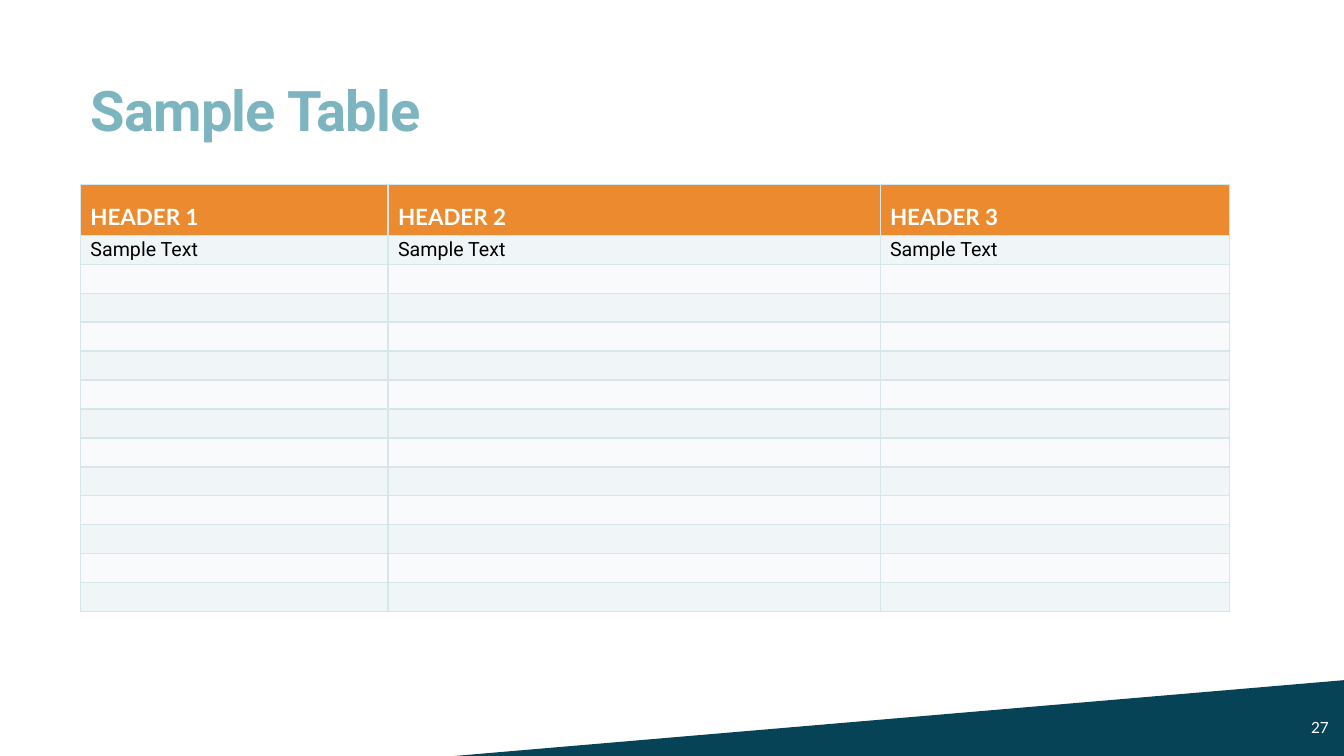
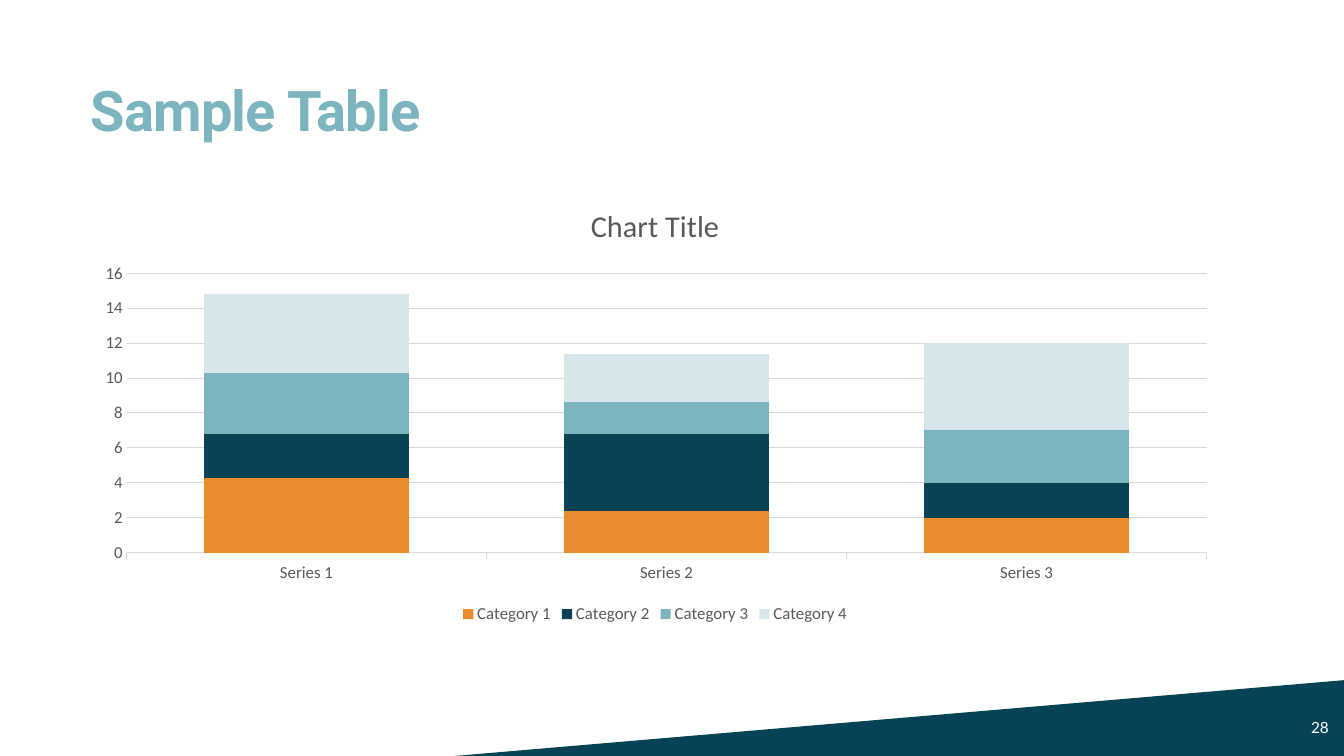
"""Build two sample slides: a banded table and a stacked column chart."""
from lxml import etree
from pptx import Presentation
from pptx.chart.data import CategoryChartData
from pptx.dml.color import RGBColor
from pptx.enum.chart import XL_CHART_TYPE, XL_LEGEND_POSITION, XL_TICK_MARK
from pptx.enum.shapes import MSO_SHAPE
from pptx.enum.text import MSO_ANCHOR
from pptx.oxml import parse_xml
from pptx.oxml.ns import nsdecls, qn
from pptx.util import Cm, Pt

STACKED = XL_CHART_TYPE.COLUMN_STACKED
BOTTOM_LEGEND = XL_LEGEND_POSITION.BOTTOM
TICK_OUT = XL_TICK_MARK.OUTSIDE
TICK_NONE = XL_TICK_MARK.NONE
TRIANGLE = MSO_SHAPE.RIGHT_TRIANGLE
MIDDLE, BOTTOM = MSO_ANCHOR.MIDDLE, MSO_ANCHOR.BOTTOM

COLORS = {
    "band": "074356", "navy": "094255", "teal": "7CB4C0", "pale": "D7E6EB",
    "orange": "EB8A2F", "odd": "F0F5F7", "even": "F8FAFB", "white": "FFFFFF",
    "black": "000000", "gray": "595959", "grid": "D9D9D9",
}
FORMATS = {
    "title": {"name": "Roboto", "size": Pt(40), "bold": True, "color": "teal"},
    "number": {"name": "Lato", "size": Pt(11), "color": "white"},
    "header": {"name": "Lato", "size": Pt(16), "bold": True, "color": "white"},
    "body": {"name": "Roboto", "size": Pt(14), "bold": False, "color": "black"},
    "chart": {"name": "Calibri", "size": Pt(12), "color": "gray"},
    "chart_title": {"name": "Calibri", "size": Pt(21.6), "bold": False, "color": "gray"},
}
MARGINS = {
    "header": {"margin_left": Cm(0.25), "margin_right": Cm(0.13),
               "margin_top": Cm(0.13), "margin_bottom": Cm(0.13)},
    "body": {"margin_left": Cm(0.25), "margin_right": 0,
             "margin_top": 0, "margin_bottom": 0},
}

TITLE = "Sample Table"
HEADERS = ["HEADER 1", "HEADER 2", "HEADER 3"]
ROWS = [["Sample Text"] * 3] + [[""] * 3] * 12
COL_WIDTHS = [7.75, 12.4, 8.81]
HEADER_HEIGHT, ROW_HEIGHT = 1.26, 0.73

CHART_TITLE = "Chart Title"
CATEGORIES = ["Series 1", "Series 2", "Series 3"]
SERIES = [
    ("Category 1", (4.3, 2.4, 2), "orange"),
    ("Category 2", (2.5, 4.4, 2), "navy"),
    ("Category 3", (3.5, 1.8, 3), "teal"),
    ("Category 4", (4.5, 2.8, 5), "pale"),
]
PLOT = {"x": 0.04, "y": 0.2, "w": 0.94, "h": 0.63}

SLIDE_W, SLIDE_H = 33.87, 19.05
LEFT, TOP, WIDTH = 2.03, 4.65, 28.96
CHART_HEIGHT = 11.18
BAND_LEFT, BAND_TOP = 11.46, 17.14
NUMBER_LEFT = 32.79
FIRST_NUMBER = 27


def rgb(name):
    return RGBColor.from_string(COLORS[name])


def paint(fill, color):
    fill.solid()
    fill.fore_color.rgb = rgb(color)


def style(font, kind):
    for key, value in FORMATS[kind].items():
        if key == "color":
            font.color.rgb = rgb(value)
        else:
            setattr(font, key, value)


def add_text(slide, box, text, kind, anchor):
    tf = slide.shapes.add_textbox(*map(Cm, box)).text_frame
    tf.word_wrap = True
    tf.vertical_anchor = anchor
    r = tf.paragraphs[0].add_run()
    r.text = text
    style(r.font, kind)
    return tf


def add_base(prs, number):
    slide = prs.slides.add_slide(prs.slide_layouts[6])
    sp = slide.shapes.add_shape(TRIANGLE, Cm(BAND_LEFT), Cm(BAND_TOP),
                                Cm(SLIDE_W - BAND_LEFT), Cm(SLIDE_H - BAND_TOP))
    sp.shadow.inherit = False
    paint(sp.fill, "band")
    sp.line.fill.background()
    sp._element.spPr.get_or_add_xfrm().set("flipH", "1")

    p = add_text(slide, (LEFT, 1.42, 28.32, 2.31), TITLE, "title", BOTTOM).paragraphs[0]
    p.line_spacing = 0.85
    p.runs[0]._r.get_or_add_rPr().set("spc", "-50")

    box = (NUMBER_LEFT, 17.81, SLIDE_W - NUMBER_LEFT, 1.02)
    add_text(slide, box, str(number), "number", MIDDLE).margin_right = 0
    return slide


def add_borders(cell):
    tcPr = cell._tc.get_or_add_tcPr()
    for side in ("lnL", "lnR", "lnT", "lnB"):
        ln = etree.SubElement(tcPr, qn(f"a:{side}"), w=str(Pt(1)))
        fill = etree.SubElement(ln, qn("a:solidFill"))
        etree.SubElement(fill, qn("a:srgbClr"), val=COLORS["pale"])


def fill_cell(cell, text, kind, color):
    add_borders(cell)
    paint(cell.fill, color)
    cell.vertical_anchor = MIDDLE
    for key, value in MARGINS[kind].items():
        setattr(cell, key, value)
    p = cell.text_frame.paragraphs[0]
    if kind == "header":
        p.line_spacing = 1.5
    if text:
        r = p.add_run()
        r.text = text
        style(r.font, kind)
    else:
        size = FORMATS[kind]["size"].centipoints
        etree.SubElement(p._p, qn("a:endParaRPr"), sz=str(size))


def add_data_table(slide):
    heights = [HEADER_HEIGHT] + [ROW_HEIGHT] * len(ROWS)
    table = slide.shapes.add_table(len(heights), len(HEADERS), Cm(LEFT), Cm(TOP),
                                   Cm(WIDTH), Cm(sum(heights))).table
    table.horz_banding = False
    for column, width in zip(table.columns, COL_WIDTHS):
        column.width = Cm(width)
    for i, texts in enumerate([HEADERS] + ROWS):
        table.rows[i].height = Cm(heights[i])
        kind = "body" if i else "header"
        color = ("odd" if i % 2 else "even") if i else "orange"
        for j, text in enumerate(texts):
            fill_cell(table.cell(i, j), text, kind, color)


def set_plot_layout(chart):
    plot_area = chart._chartSpace.chart.plotArea
    for old in plot_area.findall(qn("c:layout")):
        plot_area.remove(old)
    sizes = "".join(f'<c:{k} val="{v}"/>' for k, v in PLOT.items())
    plot_area.insert(0, parse_xml(
        f'<c:layout {nsdecls("c")}><c:manualLayout><c:layoutTarget val="inner"/>'
        f'<c:xMode val="edge"/><c:yMode val="edge"/>{sizes}'
        '</c:manualLayout></c:layout>'))


def add_column_chart(slide):
    data = CategoryChartData()
    data.categories = CATEGORIES
    for name, values, _ in SERIES:
        data.add_series(name, values)
    chart = slide.shapes.add_chart(STACKED, Cm(LEFT), Cm(TOP), Cm(WIDTH),
                                   Cm(CHART_HEIGHT), data).chart
    style(chart.font, "chart")

    chart.has_title = True
    r = chart.chart_title.text_frame.paragraphs[0].add_run()
    r.text = CHART_TITLE
    style(r.font, "chart_title")
    chart.chart_title.include_in_layout = False

    chart.has_legend = True
    chart.legend.position = BOTTOM_LEGEND
    chart.legend.include_in_layout = False
    style(chart.legend.font, "chart")

    plot = chart.plots[0]
    plot.vary_by_categories = False
    plot.gap_width, plot.overlap = 75, 100
    for series, (_, _, color) in zip(plot.series, SERIES):
        paint(series.format.fill, color)

    cat, val = chart.category_axis, chart.value_axis
    for axis, tick in ((cat, TICK_OUT), (val, TICK_NONE)):
        axis.major_tick_mark = tick
        style(axis.tick_labels.font, "chart")
    val.minimum_scale, val.maximum_scale, val.major_unit = 0, 16, 2
    val.format.line.fill.background()
    for line in (cat.format.line, val.major_gridlines.format.line):
        line.color.rgb = rgb("grid")
        line.width = Pt(0.75)
    set_plot_layout(chart)


def main():
    prs = Presentation()
    prs.slide_width, prs.slide_height = Cm(SLIDE_W), Cm(SLIDE_H)
    for number, add_content in enumerate((add_data_table, add_column_chart), FIRST_NUMBER):
        add_content(add_base(prs, number))
    prs.save("out.pptx")


if __name__ == "__main__":
    main()
